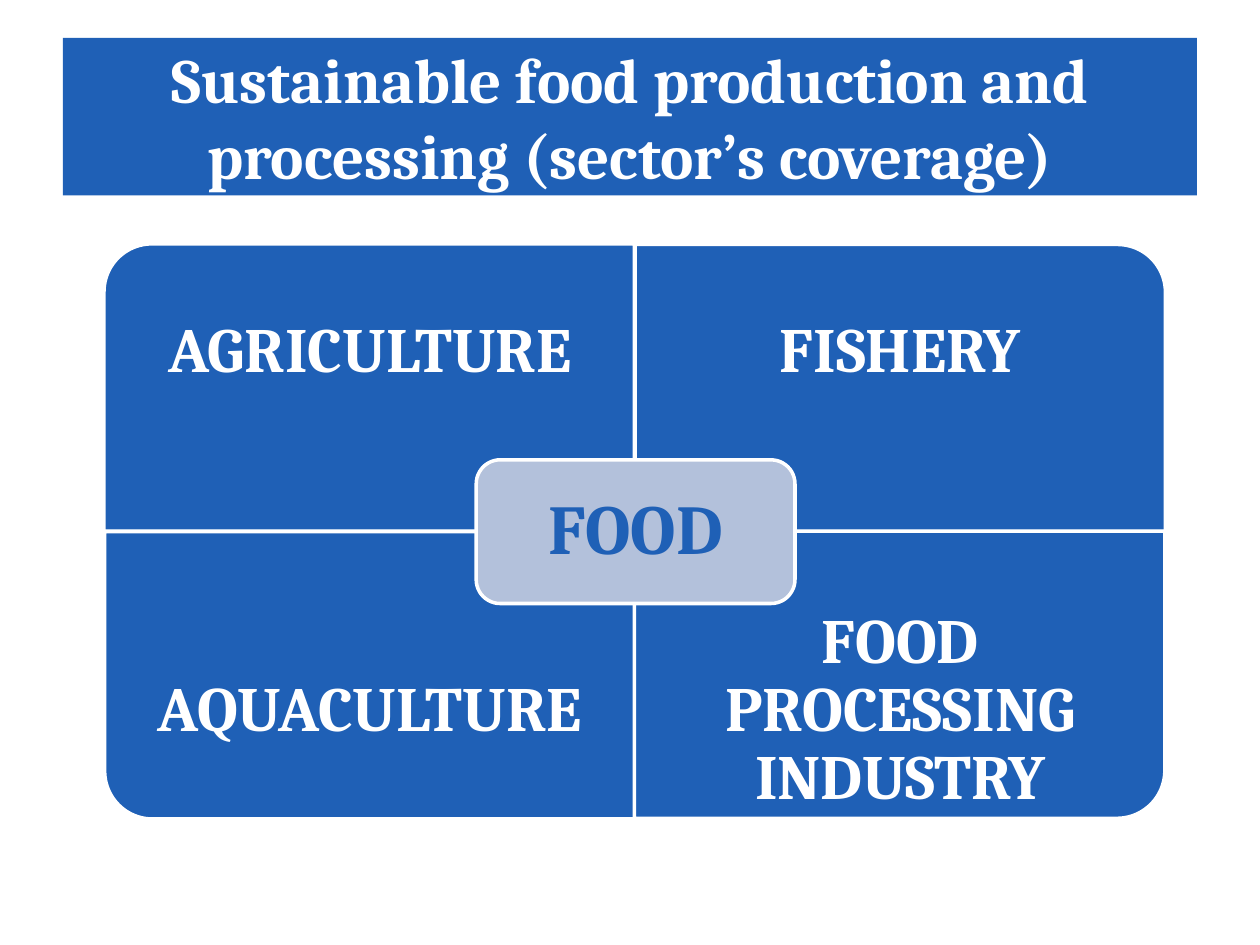
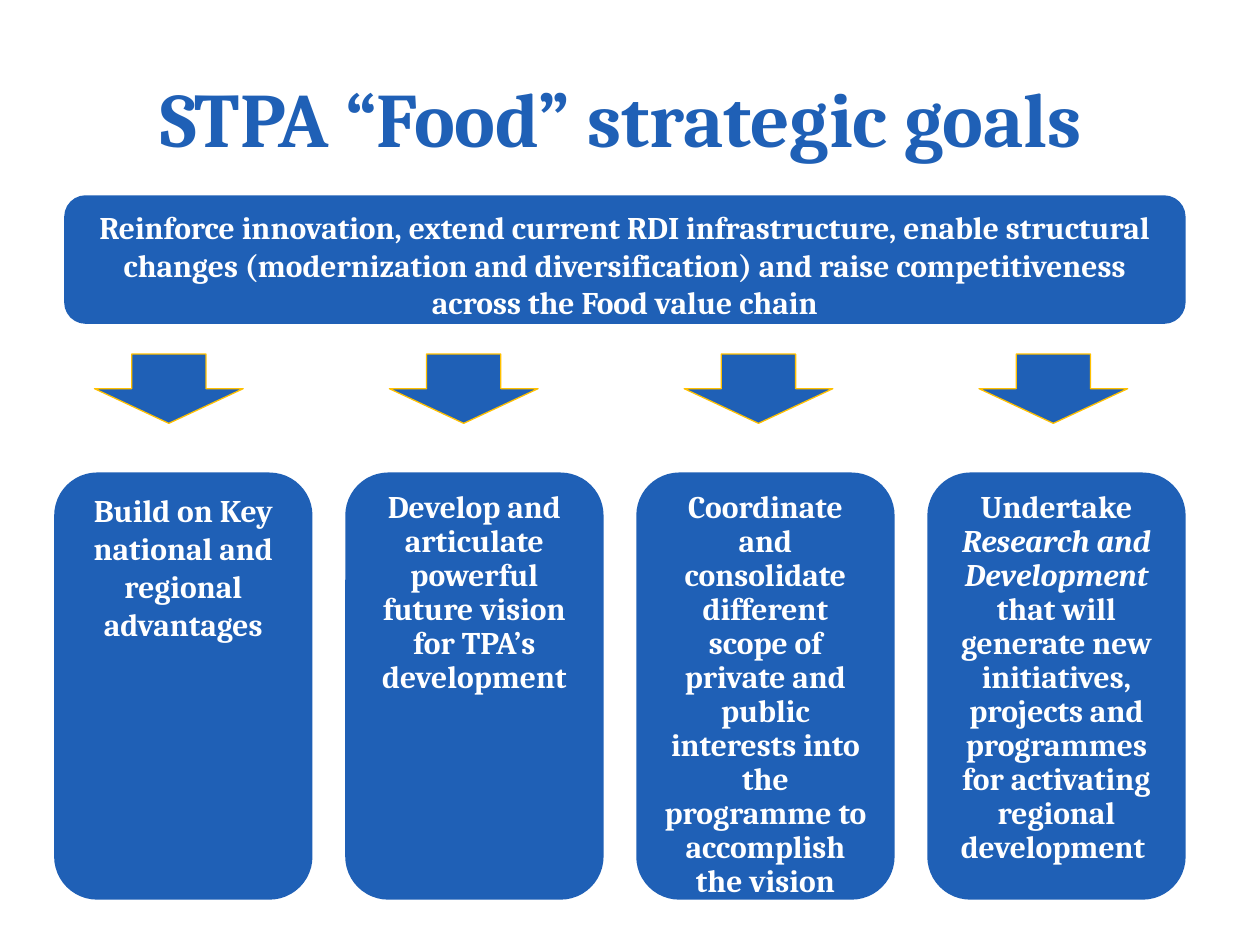
from pptx import Presentation
from pptx.dml.color import RGBColor
from pptx.enum.shapes import MSO_SHAPE
from pptx.enum.text import MSO_ANCHOR, PP_ALIGN
from pptx.util import Emu, Pt

SCALE = 9144
FONT = "Cambria"
COLORS = {"blue": "1F60B6", "pale": "B3C1DB", "white": "FFFFFF", "gold": "FFC000"}
TITLE = (50, 30, 900, 125)

SECTORS = [
    ("AGRICULTURE", 270),
    ("FISHERY", 0),
    ("AQUACULTURE", 180),
    ("FOOD PROCESSING INDUSTRY", 90),
]
AIM = (
    "Reinforce innovation, extend current RDI infrastructure, enable structural "
    "changes (modernization and diversification) and raise competitiveness "
    "across the Food value chain"
)
GOALS = [
    ("Build on Key national and regional advantages", 1.0),
    ("Develop and articulate powerful future vision for TPA’s development", 0.9),
    ("Coordinate and consolidate different scope of private and public interests "
     "into the programme to accomplish the vision", 0.9),
    ("Undertake _Research and Development _that will generate new initiatives, "
     "projects and programmes for activating regional development ", 0.9),
]


def px(*nums):
    return [Emu(num * SCALE) for num in nums]


def color(name):
    return RGBColor.from_string(COLORS[name])


def write(shape, text, size=18, ink="white", anchor=MSO_ANCHOR.MIDDLE,
          space=1.0, inset=None):
    frame = shape.text_frame
    frame.word_wrap = True
    frame.vertical_anchor = anchor
    if inset is not None:
        edge = px(inset)[0]
        frame.margin_left = frame.margin_right = edge
        frame.margin_top = frame.margin_bottom = edge
    para = frame.paragraphs[0]
    para.alignment = PP_ALIGN.CENTER
    para.line_spacing = space
    for index, part in enumerate(text.split("_")):
        run = para.add_run()
        run.text = part
        font = run.font
        font.name, font.size, font.bold = FONT, Pt(size), True
        font.italic = index % 2 == 1
        font.color.rgb = color(ink)


def label(slide, box, text, **style):
    write(slide.shapes.add_textbox(*px(*box)), text, **style)


def block(slide, kind, box, fill="blue", line=None, width=2, turn=0):
    left, top, wide, high = box
    if turn % 180:
        left += (wide - high) // 2
        top += (high - wide) // 2
        wide, high = high, wide
    shape = slide.shapes.add_shape(kind, *px(left, top, wide, high))
    shape.rotation = turn
    shape.shadow.inherit = False
    shape.fill.solid()
    shape.fill.fore_color.rgb = color(fill)
    if line:
        shape.line.color.rgb = color(line)
        shape.line.width = Pt(width)
    else:
        shape.line.fill.background()
    return shape


def panel(slide, box, text, space=1.0):
    shape = block(slide, MSO_SHAPE.ROUNDED_RECTANGLE, box)
    write(shape, text, anchor=MSO_ANCHOR.TOP, space=space)


def sectors(slide):
    left, top, wide, high, body = 83, 194, 421, 228, 171
    for index, (name, turn) in enumerate(SECTORS):
        row, col = divmod(index, 2)
        x, y = left + col * wide, top + row * high
        block(slide, MSO_SHAPE.ROUND_1_RECTANGLE, (x, y, wide, high),
              line="white", turn=turn)
        label(slide, (x, y + row * (high - body), wide, body), name,
              size=36, space=0.9, inset=28)
    hub = block(slide, MSO_SHAPE.ROUNDED_RECTANGLE, (378, 365, 253, 114),
                fill="pale", line="white")
    write(hub, "FOOD", size=40, ink="blue", space=0.9, inset=17)
    head = block(slide, MSO_SHAPE.RECTANGLE, TITLE)
    write(head, "Sustainable food production and processing (sector’s coverage)",
          size=36)


def goals(slide):
    label(slide, TITLE, "STPA “Food” strategic goals ", size=44, ink="blue")
    panel(slide, (51, 155, 890, 102), AIM)
    for index, (text, space) in enumerate(GOALS):
        block(slide, MSO_SHAPE.DOWN_ARROW, (75 + index * 234, 281, 118, 55),
              line="gold", width=0.75)
        panel(slide, (43 + index * 231, 375, 205, 339), text, space)


def main():
    deck = Presentation()
    deck.slide_width, deck.slide_height = px(1000, 750)
    for draw in (sectors, goals):
        draw(deck.slides.add_slide(deck.slide_layouts[6]))
    deck.save("out.pptx")


if __name__ == "__main__":
    main()
